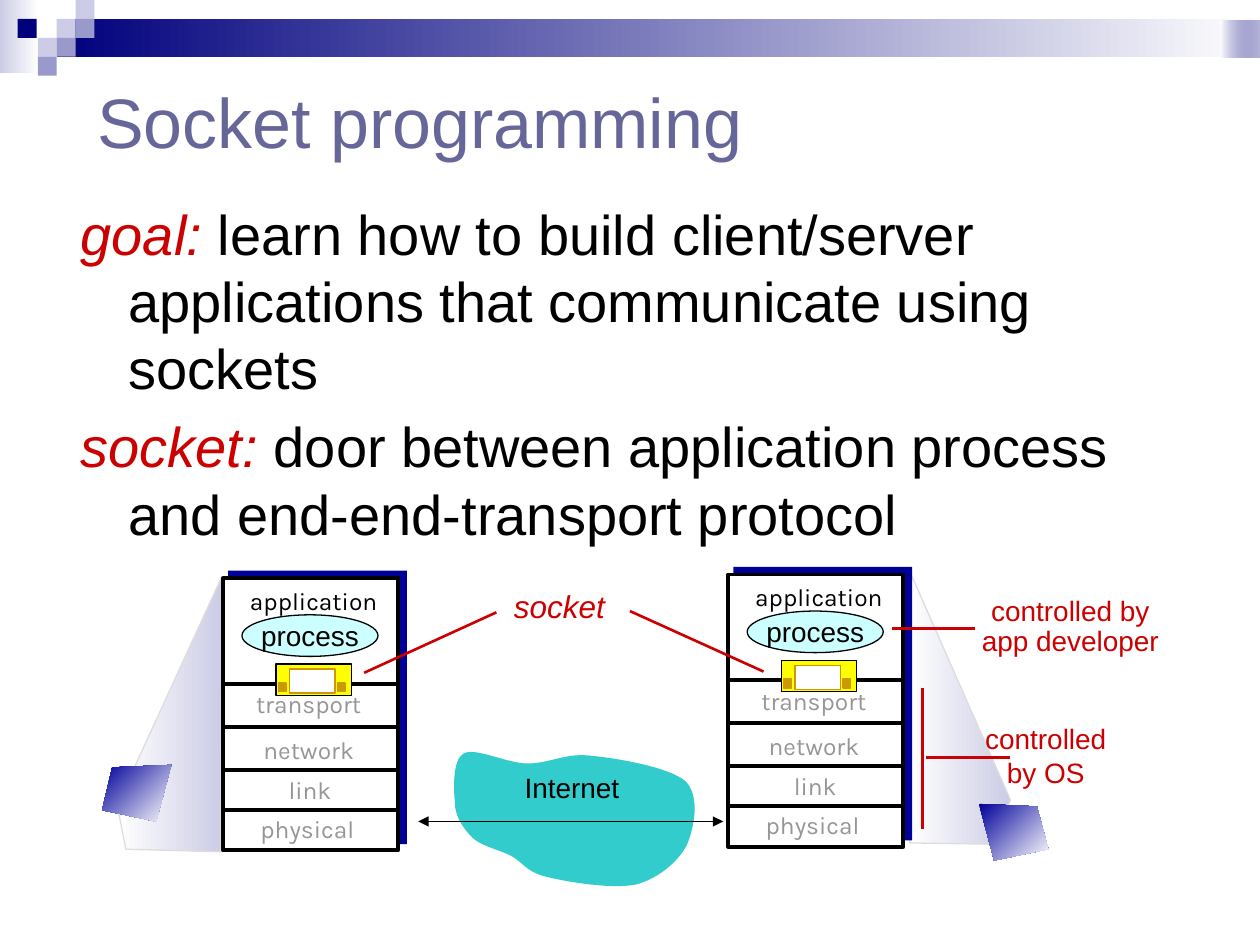
from pptx import Presentation
from pptx.dml.color import RGBColor
from pptx.enum.shapes import MSO_CONNECTOR, MSO_SHAPE as Shp
from pptx.enum.text import MSO_ANCHOR as Anchor, MSO_AUTO_SIZE as Auto, PP_ALIGN as Align
from pptx.oxml.ns import qn
from pptx.util import Inches, Pt
from lxml.etree import SubElement

COLORS = {
    "black": "000000", "white": "FFFFFF", "title": "666699", "red": "CC0000",
    "grey": "969696", "navy": "00007D", "blue": "000099", "mid": "9999CC",
    "pale": "CCCCE6", "edge": "DDDDDD", "cloud": "33CCCC", "process": "CCFFFF",
    "yellow": "FFFF00", "gold": "CC9900",
}


def rgb(name):
    return RGBColor.from_string(COLORS[name])


def paint(sp, fill, line=None, width=0.75, angle=0):
    """Fill with one colour, or with a gradient given as a pair of colours."""
    sp.shadow.inherit = False
    if isinstance(fill, tuple):
        sp.fill.gradient()
        sp.fill.gradient_angle = angle
        for stop, name, pos in zip(sp.fill.gradient_stops, fill, (0, 1)):
            stop.color.rgb = rgb(name)
            stop.position = pos
    else:
        sp.fill.solid()
        sp.fill.fore_color.rgb = rgb(fill)
    if line:
        sp.line.color.rgb = rgb(line)
        sp.line.width = Pt(width)
    else:
        sp.line.fill.background()
    return sp


def box(s, x, y, w, h, fill, line=None, width=0.75, kind=Shp.RECTANGLE):
    sp = s.shapes.add_shape(kind, Inches(x), Inches(y), Inches(w), Inches(h))
    return paint(sp, fill, line, width)


def outline(s, points, fill, line=None, angle=0):
    pts = [(Inches(x), Inches(y)) for x, y in points]
    builder = s.shapes.build_freeform(*pts[0])
    builder.add_line_segments(pts[1:], close=True)
    return paint(builder.convert_to_shape(), fill, line, angle=angle)


def line(s, x1, y1, x2, y2, color="red", width=1.5, arrows=False):
    c = s.shapes.add_connector(MSO_CONNECTOR.STRAIGHT, *map(Inches, (x1, y1, x2, y2)))
    c.line.color.rgb = rgb(color)
    c.line.width = Pt(width)
    spPr = c._element.spPr
    if arrows:
        for end in ("a:headEnd", "a:tailEnd"):
            SubElement(spPr.find(qn("a:ln")), qn(end), type="triangle")
    SubElement(spPr, qn("a:effectLst"))


def add_run(p, text, color, size, name="Arial", italic=False):
    r = p.add_run()
    r.text = text
    values = {"size": Pt(size), "name": name, "italic": italic, "bold": False}
    for key, value in values.items():
        setattr(r.font, key, value)
    r.font.color.rgb = rgb(color)


def write(tf, lines, color, size, spacing=1.0, wrap=False, **font):
    tf.word_wrap = wrap
    for i, text in enumerate(lines):
        p = tf.add_paragraph() if i else tf.paragraphs[0]
        p.alignment = Align.CENTER
        p.line_spacing = spacing
        add_run(p, text, color, size, **font)


def label(s, x, y, w, h, lines, color="red", size=16, **form):
    tb = s.shapes.add_textbox(Inches(x), Inches(y), Inches(w), Inches(h))
    write(tb.text_frame, lines, color, size, **form)


def place(sp, x, y, w, h):
    sp.left, sp.top, sp.width, sp.height = map(Inches, (x, y, w, h))


def banner(s):
    """Gradient bar and checkered squares along the top edge."""
    box(s, 0, 0, 0.31, 0.58, ("pale", "white"))
    box(s, 0.45, 0.15, 9.55, 0.3, ("navy", "white"))
    squares = [(0.45, 0.15, "pale"), (0.6, 0, "pale"), (0.6, 0.15, "mid"),
               (0.3, 0.3, "pale"), (0.14, 0.15, "navy"), (0.45, 0.3, "mid"),
               (0.3, 0.45, "mid")]
    for x, y, color in squares:
        box(s, x, y, 0.15, 0.15, color)
    end = box(s, 9.69, 0.16, 0.31, 0.3, ("white", "navy"))
    last = end._element.spPr.findall(".//" + qn("a:srgbClr"))[-1]
    SubElement(last, qn("a:alpha"), val="27000")


def title(s, x, y, w, h):
    sp = s.shapes.title
    place(sp, x, y, w, h)
    tf = sp.text_frame
    tf.vertical_anchor = Anchor.MIDDLE
    tf.paragraphs[0].alignment = Align.LEFT
    add_run(tf.paragraphs[0], "Socket programming", "title", 40)


def definitions(s, x, y, w, h):
    sp = s.placeholders[1]
    place(sp, x, y, w, h)
    tf = sp.text_frame
    tf.auto_size = Auto.NONE
    items = [
        ("goal:", " learn how to build client/server applications that communicate using sockets"),
        ("socket:", " door between application process and end-end-transport protocol"),
    ]
    for i, (term, text) in enumerate(items):
        p = tf.add_paragraph() if i else tf.paragraphs[0]
        pPr = p._p.get_or_add_pPr()
        pPr.set("marL", str(Inches(0.38)))
        pPr.set("indent", str(Inches(-0.38)))
        SubElement(pPr, qn("a:buNone"))
        p.space_before = Pt(6.4 * i)
        p.line_spacing = 1.0
        add_run(p, term, "red", 32, italic=True)
        add_run(p, text, "black", 32)


def curved(s, x, y, w, h, start, segments, fill):
    """Closed outline of cubic segments, with points relative to the box."""
    sp = outline(s, [start] + [seg[-1] for seg in segments], fill)
    place(sp, x, y, w, h)
    path = sp._element.spPr.find(".//" + qn("a:path"))
    path.set("w", str(Inches(w)))
    path.set("h", str(Inches(h)))
    for node in list(path):
        path.remove(node)
    for tag, points in [("moveTo", [start])] + [("cubicBezTo", seg) for seg in segments]:
        node = SubElement(path, qn("a:" + tag))
        for px, py in points:
            SubElement(node, qn("a:pt"), x=str(Inches(px)), y=str(Inches(py)))
    SubElement(path, qn("a:close"))


def internet(s, x, y, w, h):
    shape = [((0.01, 0.33), (0, 0.1), (0.09, 0.05)), ((0.19, 0), (0.43, 0.13), (0.6, 0.13)),
             ((0.77, 0.13), (0.91, 0.04), (1.11, 0.07)), ((1.32, 0.09), (1.72, 0.16), (1.85, 0.27)),
             ((1.97, 0.39), (1.92, 0.64), (1.86, 0.78)), ((1.79, 0.91), (1.64, 1.04), (1.46, 1.09)),
             ((1.27, 1.13), (0.91, 1.07), (0.75, 1.03)), ((0.58, 0.99), (0.56, 0.91), (0.46, 0.86)),
             ((0.36, 0.81), (0.24, 0.79), (0.16, 0.72)), ((0.09, 0.65), (0.02, 0.55), (0.02, 0.44))]
    curved(s, x, y, w, h, (0.02, 0.44), shape, "cloud")
    label(s, x + 0.47, y + 0.14, 0.96, 0.37, ["Internet"], "black")
    line(s, x - 0.27, y + 0.59, x + 2.15, y + 0.59, "black", 0.75, arrows=True)


def host(s, x, y):
    """Protocol stack with its process and socket."""
    w, h = 1.39, 2.16
    box(s, x + 0.04, y - 0.06, 1.42, 2.17, "blue")
    box(s, x, y, w, h, "white", "black", 2.25)
    for dy in (0.84, 1.18, 1.52, 1.84):
        line(s, x + 0.01, y + dy, x + w, y + dy, "black", 2.25)
    layers = [("application", 0, -0.01, "black"), ("transport", -0.04, 0.81, "grey"),
              ("network", -0.04, 1.17, "grey"), ("link", -0.03, 1.49, "grey"),
              ("physical", -0.05, 1.8, "grey")]
    for text, dx, dy, color in layers:
        label(s, x + dx, y + dy, 1.44, 0.36, [text], color, 14, spacing=1.1, wrap=True, name="Karla")
    oval = box(s, x + 0.15, y + 0.29, 1.08, 0.33, "process", "black", kind=Shp.OVAL)
    oval.text_frame.vertical_anchor = Anchor.MIDDLE
    write(oval.text_frame, ["process"], "black", 16)
    # Socket
    box(s, x + 0.42, y + 0.68, 0.6, 0.25, "yellow", "black")
    box(s, x + 0.53, y + 0.72, 0.36, 0.19, "white", "gold")
    for dx in (0.44, 0.91):
        box(s, x + dx, y + 0.83, 0.06, 0.07, "gold", "gold")


def callouts(s):
    for ends in [(7.74, 4.99, 7.08, 4.99), (7.32, 5.46, 7.32, 6.58), (8.02, 6.01, 7.35, 6.01),
                 (2.89, 5.34, 3.94, 4.86), (6.06, 5.33, 5, 4.85)]:
        line(s, *ends)
    label(s, 7.72, 5.68, 1.16, 0.9, ["controlled", "by OS"])
    label(s, 7.69, 4.69, 1.61, 0.58, ["controlled by", "app developer"], spacing=0.9)
    label(s, 3.94, 4.64, 1, 0.4, ["socket"], size=18, spacing=0.9, italic=True)


def main():
    prs = Presentation()
    prs.slide_width, prs.slide_height = Inches(10), Inches(7.5)
    s = prs.slides.add_slide(prs.slide_layouts[1])
    banner(s)
    title(s, 0.67, 0.33, 8.5, 1.25)
    definitions(s, 0.54, 1.53, 8.77, 1.68)
    # Beams from the end systems to their stacks
    for beam in ([(8.02, 6.35), (7.21, 4.51), (7.22, 6.69), (7.87, 6.7)],
                 [(0.93, 6.39), (1.76, 4.58), (1.75, 6.76), (1, 6.74)]):
        outline(s, beam, ("white", "pale"), "edge")
    internet(s, 3.59, 5.93, 1.98, 1.13)
    host(s, 1.77, 4.59)
    host(s, 5.78, 4.56)
    callouts(s)
    # End systems
    for device in ([(1.36, 6.07), (0.89, 6.09), (0.81, 6.43), (1.24, 6.52)],
                   [(7.77, 6.38), (8.23, 6.4), (8.32, 6.74), (7.89, 6.83)]):
        outline(s, device, ("blue", "white"), angle=315)
    prs.save("out.pptx")


if __name__ == "__main__":
    main()
